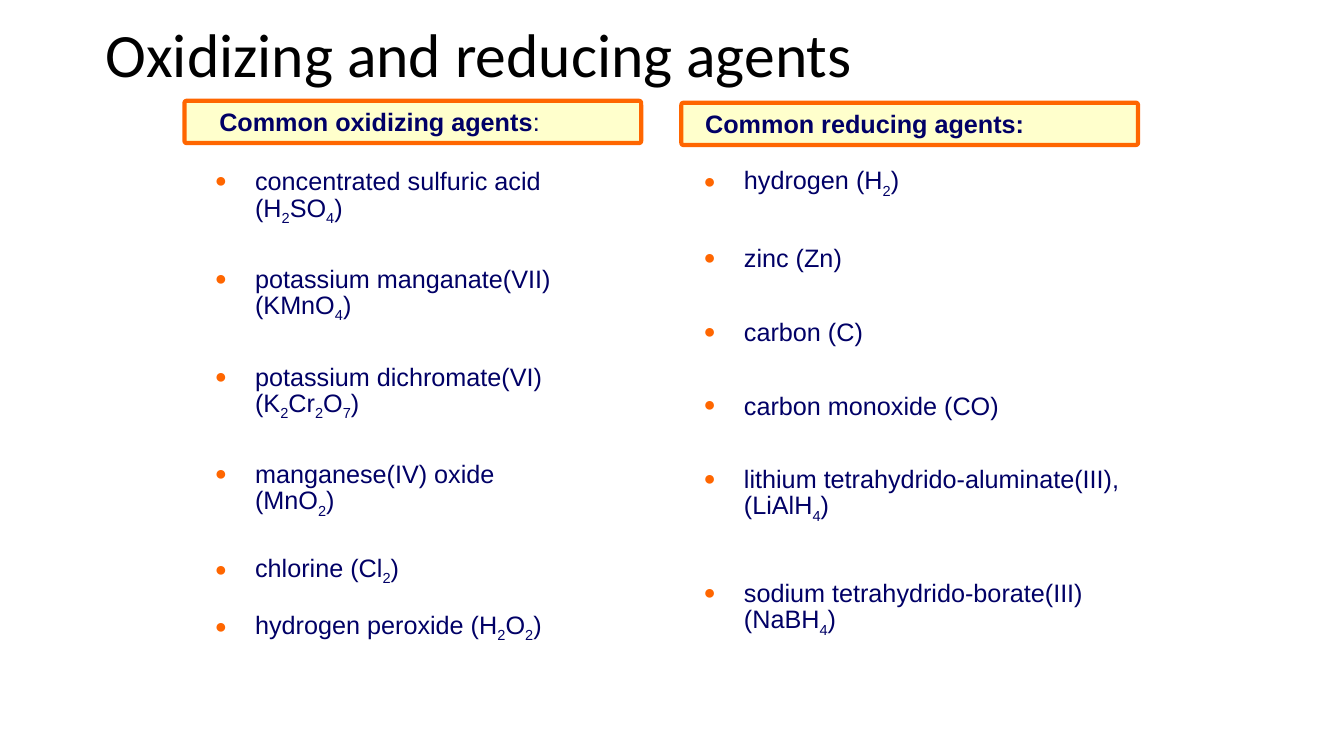
import pptx
import pptx.util
import pptx.dml.color
import pptx.enum.shapes
import pptx.enum.text
import pptx.oxml.ns
import lxml.etree

Pt = pptx.util.Pt
TEXT = pptx.enum.text
NAVY, ORANGE, CREAM = "010066", "FF6600", "FFFFCC"
LINE = 21.6
OXIDE = [
    "concentrated sulfuric acid\n(H_2SO_4)",
    "potassium manganate(VII)\n(KMnO_4)",
    "potassium dichromate(VI)\n(K_2Cr_2O_7)",
    "manganese(IV) oxide\n(MnO_2)",
    "chlorine (Cl_2)",
    "hydrogen peroxide (H_2O_2)",
]
REDUCE = [
    "hydrogen (H_2)",
    "zinc (Zn)",
    "carbon (C)",
    "carbon monoxide (CO)",
    "lithium tetrahydrido-aluminate(III), (LiAlH_4)",
    "sodium tetrahydrido-borate(III) (NaBH_4)",
]


def color(code):
    """Turn a hex string into a colour."""
    return pptx.dml.color.RGBColor.from_string(code)


def style(thing, **form):
    """Set each given attribute on an object."""
    for name, value in form.items():
        setattr(thing, name, value)


def place(shape, box):
    """Move a shape to a box given in points."""
    names = ("left", "top", "width", "height")
    style(shape, **{name: Pt(value) for name, value in zip(names, box)})


def write(para, text, code=NAVY, **form):
    """Add one styled run to a paragraph."""
    run = para.add_run()
    run.text = text
    style(run.font, **{"name": "Arial", "size": Pt(18), **form})
    run.font.color.rgb = color(code)
    return run


def bullet(para):
    """Give a paragraph a hanging orange dot."""
    props = para._p.get_or_add_pPr()
    props.set("marL", str(Pt(28.8)))
    props.set("indent", str(-Pt(28.8)))
    tag = pptx.oxml.ns.qn
    tint = lxml.etree.SubElement(props, tag("a:buClr"))
    lxml.etree.SubElement(tint, tag("a:srgbClr"), val=ORANGE)
    lxml.etree.SubElement(props, tag("a:buSzPct"), val="80000")
    lxml.etree.SubElement(props, tag("a:buFont"), typeface="Arial")
    lxml.etree.SubElement(props, tag("a:buChar"), char="●")


def formula(para, text):
    """Write text in which an underscore lowers the next digit."""
    for i, part in enumerate(text.split("_")):
        if i:
            low = write(para, part[0])
            low._r.get_or_add_rPr().set("baseline", "-25000")
            part = part[1:]
        for j, line in enumerate(part.split("\n")):
            if j:
                para.add_line_break()
            if line:
                write(para, line)


def title(shape, box, text):
    """Fill the title placeholder."""
    place(shape, box)
    frame = shape.text_frame
    style(frame, vertical_anchor=TEXT.MSO_ANCHOR.MIDDLE, auto_size=TEXT.MSO_AUTO_SIZE.NONE)
    para = frame.paragraphs[0]
    style(para, alignment=TEXT.PP_ALIGN.LEFT, line_spacing=0.9)
    write(para, text, "000000", name="Calibri", size=Pt(44))


def header(slide, box, inset, parts):
    """Draw a framed heading from text and weight pairs."""
    kind = pptx.enum.shapes.MSO_SHAPE.ROUNDED_RECTANGLE
    shape = slide.shapes.add_shape(kind, *map(Pt, box))
    shape.adjustments[0] = 0.05
    shape.shadow.inherit = False
    shape.fill.solid()
    shape.fill.fore_color.rgb = color(CREAM)
    shape.line.color.rgb = color(ORANGE)
    shape.line.width = Pt(3)
    frame = shape.text_frame
    style(frame, margin_left=Pt(inset), margin_top=0, margin_bottom=0,
          word_wrap=True, vertical_anchor=TEXT.MSO_ANCHOR.MIDDLE)
    para = frame.paragraphs[0]
    para.alignment = TEXT.PP_ALIGN.LEFT
    for text, bold in parts:
        write(para, text, bold=bold)


def agents(shape, box, items, gap, last):
    """Fill a body placeholder, with its own gap before the last item."""
    place(shape, box)
    frame = shape.text_frame
    style(frame, word_wrap=True, vertical_anchor=TEXT.MSO_ANCHOR.TOP,
          auto_size=TEXT.MSO_AUTO_SIZE.NONE)
    gaps = [0] + [gap] * (len(items) - 2) + [last]
    for i, (item, space) in enumerate(zip(items, gaps)):
        para = frame.add_paragraph() if i else frame.paragraphs[0]
        bullet(para)
        style(para, alignment=TEXT.PP_ALIGN.LEFT, line_spacing=Pt(LINE),
              space_before=Pt(space), space_after=Pt(0))
        formula(para, item)


def main():
    """Build and save the slide."""
    deck = pptx.Presentation()
    style(deck, slide_width=Pt(960), slide_height=Pt(540))
    slide = deck.slides.add_slide(deck.slide_layouts[3])
    head, left, right = slide.placeholders
    title(head, (68.4, -10.8, 828, 104.4), "Oxidizing and reducing agents")
    header(slide, (131.8, 72, 326.2, 30.2), 24.4,
           [("Common oxidizing agents", True), (":", False)])
    header(slide, (486.7, 73.4, 326.2, 30.2), 16.6,
           [("Common reducing agents:", True)])
    agents(left, (146.2, 114.8, 321, 352), OXIDE, 26.5, 19.4)
    agents(right, (495.4, 117, 336, 346), REDUCE, 31, 38.2)
    deck.save("out.pptx")


if __name__ == "__main__":
    main()
